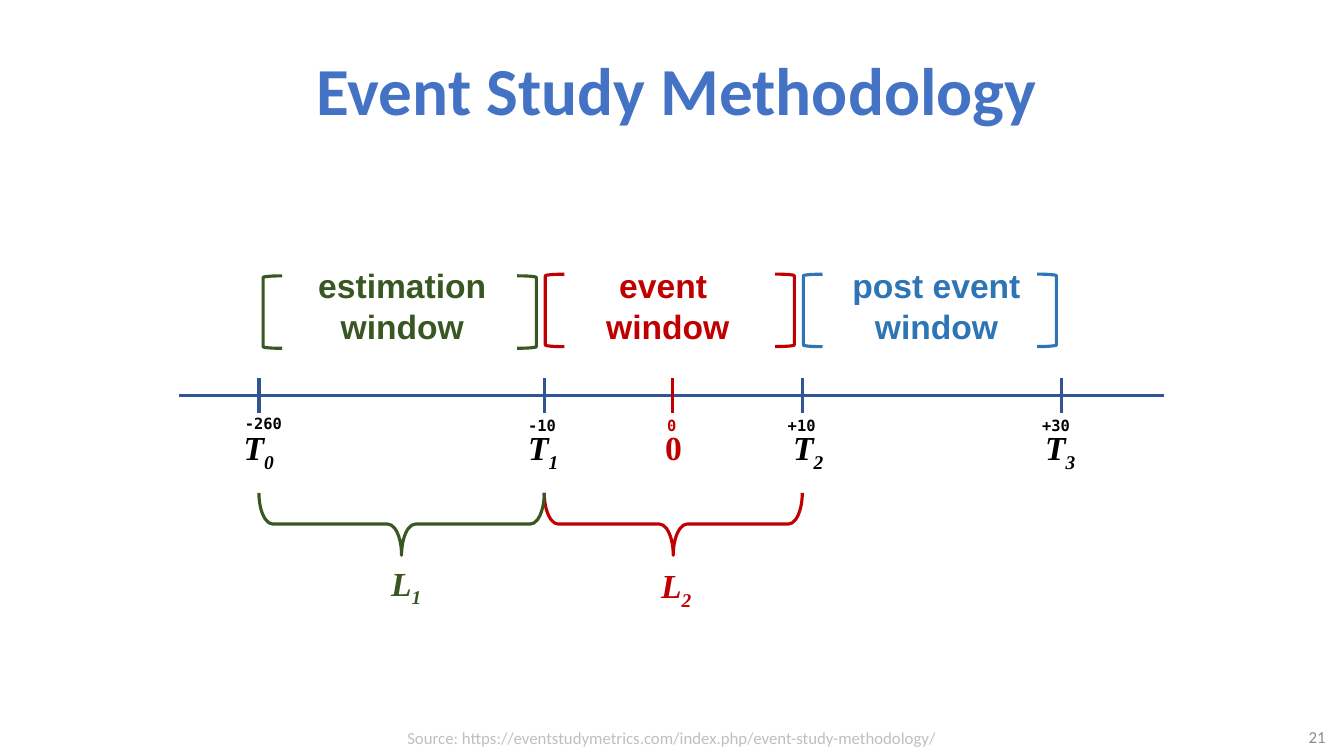
"""Build the event study timeline slide."""
from dataclasses import dataclass

from lxml import etree
from pptx import Presentation
from pptx.dml.color import RGBColor
from pptx.enum.shapes import MSO_CONNECTOR, MSO_SHAPE
from pptx.enum.text import MSO_ANCHOR, MSO_AUTO_SIZE, PP_ALIGN
from pptx.oxml.ns import qn
from pptx.util import Pt

STRAIGHT = MSO_CONNECTOR.STRAIGHT
BRACKET, BRACE = MSO_SHAPE.RIGHT_BRACKET, MSO_SHAPE.LEFT_BRACE
LEFT, CENTER, RIGHT = PP_ALIGN.LEFT, PP_ALIGN.CENTER, PP_ALIGN.RIGHT
TOP, MIDDLE = MSO_ANCHOR.TOP, MSO_ANCHOR.MIDDLE
NO_FIT, GROW = MSO_AUTO_SIZE.NONE, MSO_AUTO_SIZE.SHAPE_TO_FIT_TEXT


@dataclass(frozen=True)
class Theme:
    """Colours, fonts and type sizes."""
    title: str = "4472C4"
    axis: str = "2F5597"
    estimation: str = "385723"
    event: str = "C00000"
    post: str = "2E75B6"
    ink: str = "000000"
    source: str = "BFBFBF"
    number: str = "8C8C8C"
    heading_font: str = "Calibri"
    window_font: str = "Arial"
    symbol_font: str = "Times New Roman"
    day_font: str = "DejaVu Sans Mono"
    title_size: float = 48
    label_size: float = 24
    note_size: float = 12
    day_size: float = 11
    line_width: float = 2.25


THEME = Theme()

TITLE = "Event Study Methodology"
SOURCE = "Source: https://eventstudymetrics.com/index.php/event-study-methodology/"
PAGE_NUMBER = "21"

# name: tick x, tick colour, label colour, day, day left, day top, symbol, subscript, symbol left
TICKS = {
    "start": (185, THEME.axis, THEME.ink, "-260", 167.8, 292.3, "T", "0", 167),
    "before": (388.8, THEME.axis, THEME.ink, "-10", 370.1, 293.8, "T", "1", 370.1),
    "event": (480.2, THEME.event, THEME.event, "0", 469.4, 293.8, "0", "", 468),
    "after": (573.1, THEME.axis, THEME.ink, "+10", 555.6, 293.8, "T", "2", 559.4),
    "end": (758.2, THEME.axis, THEME.ink, "+30", 737.3, 293.8, "T", "3", 739.4),
}
# text, colour, text left, text width, left bracket, right bracket, bracket top
WINDOWS = [
    ("estimation\vwindow", THEME.estimation, 219.6, 135.4, 187.9, 369.4, 197),
    ("event \vwindow", THEME.event, 425.5, 103, 389.5, 553.7, 195.8),
    ("post event\vwindow", THEME.post, 601.2, 135.4, 573.8, 740.9, 195.8),
]
# first tick, last tick, subscript, colour, label left, label top
LENGTHS = [
    ("before", "after", "2", THEME.event, 465.1, 400.3),
    ("start", "before", "1", THEME.estimation, 272.2, 398.2),
]

AXIS_LEFT, AXIS_RIGHT, AXIS_Y = 128.2, 831.6, 282.4
TICK_TOP, TICK_BOTTOM = 270, 295.2
SYMBOL_TOP, SYMBOL_WIDTH, SYMBOL_HEIGHT = 301.7, 37.4, 36
ZERO_WIDTH = 26.6
DAY_CHARACTER, DAY_HEIGHT, SIDE_INSETS = 6.62, 20.9, 14.4
WINDOW_TOP, WINDOW_HEIGHT = 185.8, 65.5
BRACKET_WIDTH, BRACKET_HEIGHT = 13.7, 51.8
BRACE_DEPTH, BRACE_MIDDLE, BRACE_CURVE = 44.6, 374.3, 0.223


def color(value):
    return RGBColor.from_string(value)


def write(shape, text, font_name, size, ink, align=LEFT, anchor=TOP, fit=GROW,
          wrap=False, bold=True, italic=False, subscript=""):
    frame = shape.text_frame
    frame.word_wrap = wrap
    frame.auto_size = fit
    frame.vertical_anchor = anchor
    paragraph = frame.paragraphs[0]
    paragraph.text = text
    if subscript:
        run = paragraph.add_run()
        run.text = subscript
        run._r.get_or_add_rPr().set("baseline", "-25000")
    paragraph.alignment = align
    font = paragraph.font
    font.name, font.size = font_name, Pt(size)
    font.bold, font.italic = bold, italic
    font.color.rgb = color(ink)


def add_label(slide, left, top, width, height, *content, **style):
    box = slide.shapes.add_textbox(Pt(left), Pt(top), Pt(width), Pt(height))
    write(box, *content, **style)


def add_symbol(slide, left, top, width, letter, subscript, ink):
    add_label(slide, left, top, width, SYMBOL_HEIGHT, letter, THEME.symbol_font,
              THEME.label_size, ink, italic=bool(subscript), subscript=subscript)


def add_line(slide, x1, y1, x2, y2, ink):
    line = slide.shapes.add_connector(STRAIGHT, Pt(x1), Pt(y1), Pt(x2), Pt(y2))
    line.line.color.rgb = color(ink)
    line.line.width = Pt(THEME.line_width)
    etree.SubElement(line._element.spPr, qn("a:effectLst"))


def add_outline(slide, kind, left, top, width, height, ink, rotation=0):
    shape = slide.shapes.add_shape(kind, Pt(left), Pt(top), Pt(width), Pt(height))
    shape.shadow.inherit = False
    shape.fill.background()
    shape.line.color.rgb = color(ink)
    shape.line.width = Pt(THEME.line_width)
    shape.rotation = rotation
    return shape


def add_heading_and_notes(slide):
    title = slide.shapes.title
    title.left, title.top, title.width, title.height = Pt(41.8), Pt(10.8), Pt(883.4), Pt(104.4)
    write(title, TITLE, THEME.heading_font, THEME.title_size, THEME.title,
          align=CENTER, anchor=MIDDLE, fit=NO_FIT, wrap=True)
    add_label(slide, 878.4, 517, 75.6, 18.7, PAGE_NUMBER, THEME.heading_font,
              THEME.note_size, THEME.number, align=RIGHT, anchor=MIDDLE,
              fit=NO_FIT, wrap=True, bold=False)
    add_label(slide, 236.2, 516.2, 487.4, 21.6, SOURCE, THEME.heading_font,
              THEME.note_size, THEME.source, align=CENTER, wrap=True, bold=False)


def add_timeline(slide):
    add_line(slide, AXIS_LEFT, AXIS_Y, AXIS_RIGHT, AXIS_Y, THEME.axis)
    for x, tick_ink, ink, day, day_left, day_top, letter, subscript, left in TICKS.values():
        add_line(slide, x, TICK_TOP, x, TICK_BOTTOM, tick_ink)
        width = SYMBOL_WIDTH if subscript else ZERO_WIDTH
        add_symbol(slide, left, SYMBOL_TOP, width, letter, subscript, ink)
        day_width = DAY_CHARACTER * len(day) + SIDE_INSETS
        add_label(slide, day_left, day_top, day_width, DAY_HEIGHT, day,
                  THEME.day_font, THEME.day_size, ink)


def add_windows(slide):
    for text, ink, left, width, opening, closing, top in WINDOWS:
        add_label(slide, left, WINDOW_TOP, width, WINDOW_HEIGHT, text,
                  THEME.window_font, THEME.label_size, ink, align=CENTER)
        for bracket_left, rotation in ((opening, 180), (closing, 0)):
            add_outline(slide, BRACKET, bracket_left, top, BRACKET_WIDTH,
                        BRACKET_HEIGHT, ink, rotation)


def add_lengths(slide):
    for first, last, subscript, ink, left, top in LENGTHS:
        start, end = TICKS[first][0], TICKS[last][0]
        span = end - start
        brace = add_outline(slide, BRACE, (start + end - BRACE_DEPTH) / 2,
                            BRACE_MIDDLE - span / 2, BRACE_DEPTH, span, ink, 270)
        brace.adjustments[0] = BRACE_CURVE
        add_symbol(slide, left, top, SYMBOL_WIDTH, "L", subscript, ink)


def main():
    presentation = Presentation()
    presentation.slide_width, presentation.slide_height = Pt(960), Pt(540)
    slide = presentation.slides.add_slide(presentation.slide_layouts[5])
    add_heading_and_notes(slide)
    add_timeline(slide)
    add_windows(slide)
    add_lengths(slide)
    presentation.save("out.pptx")


if __name__ == "__main__":
    main()
